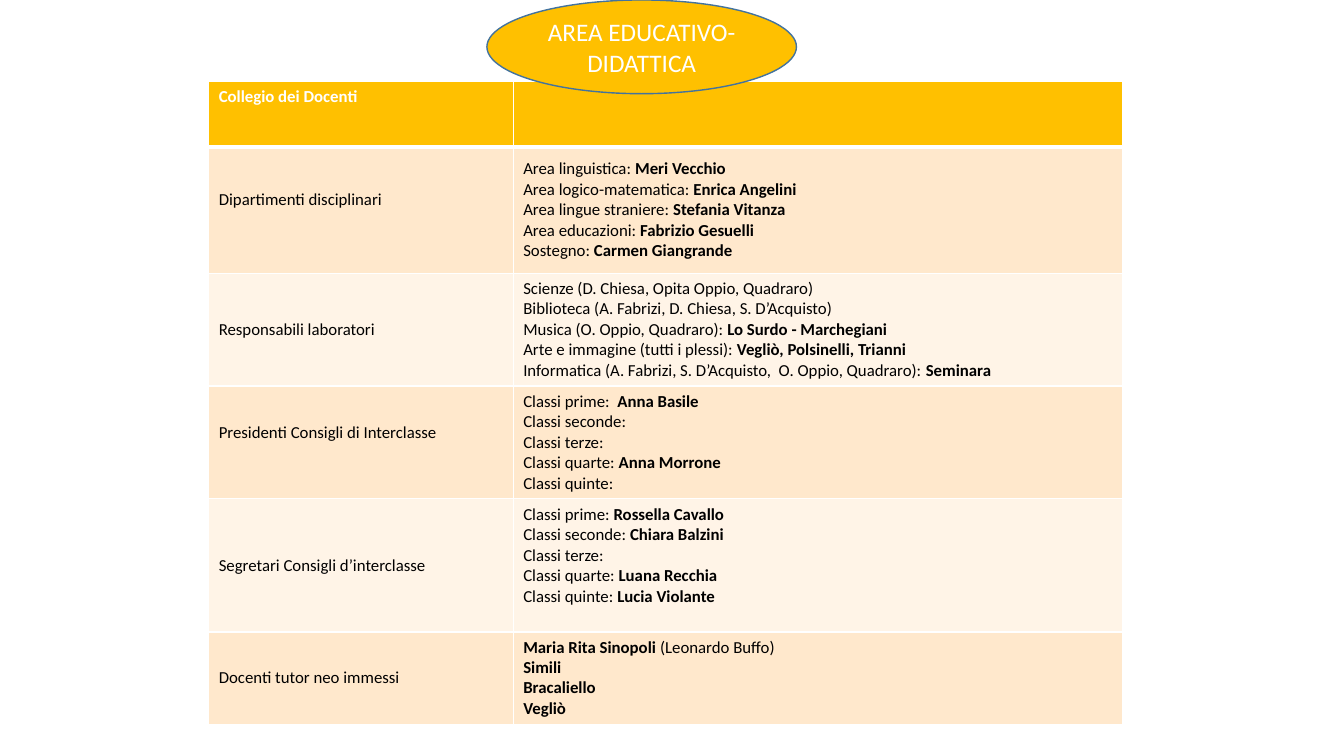
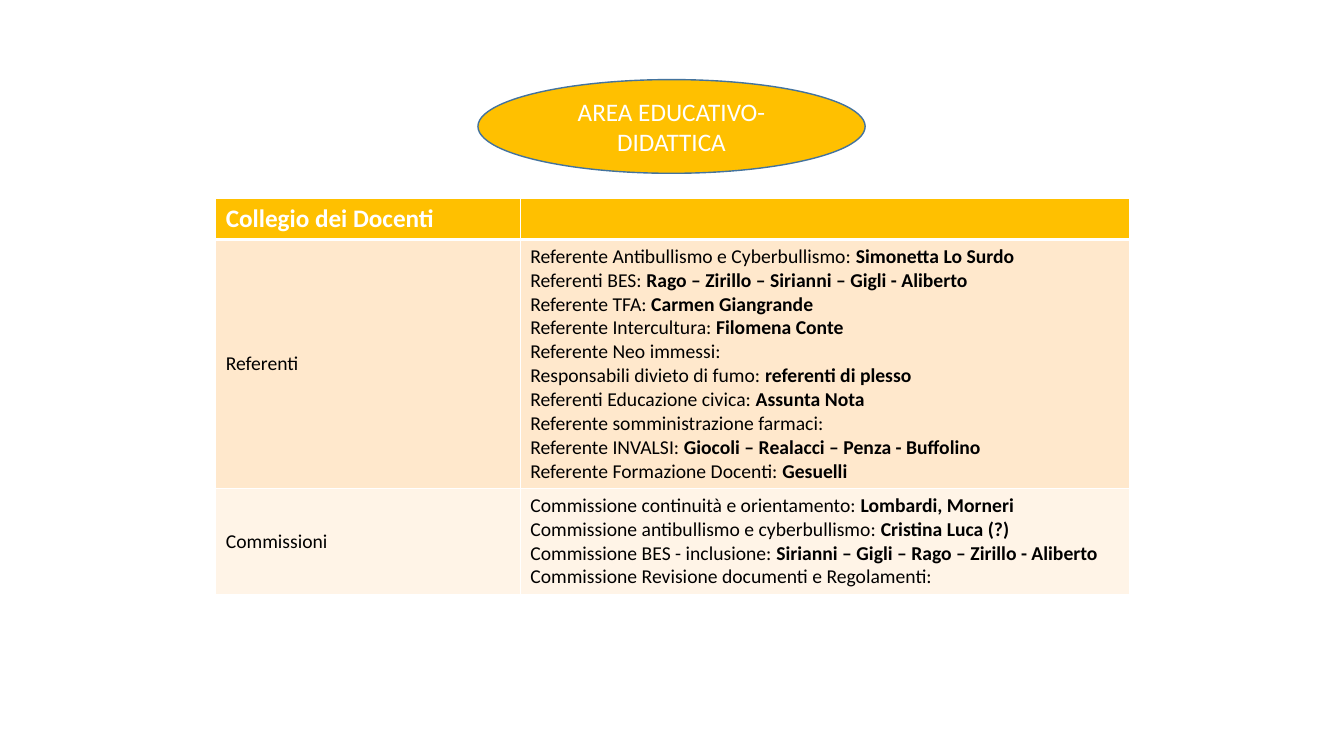
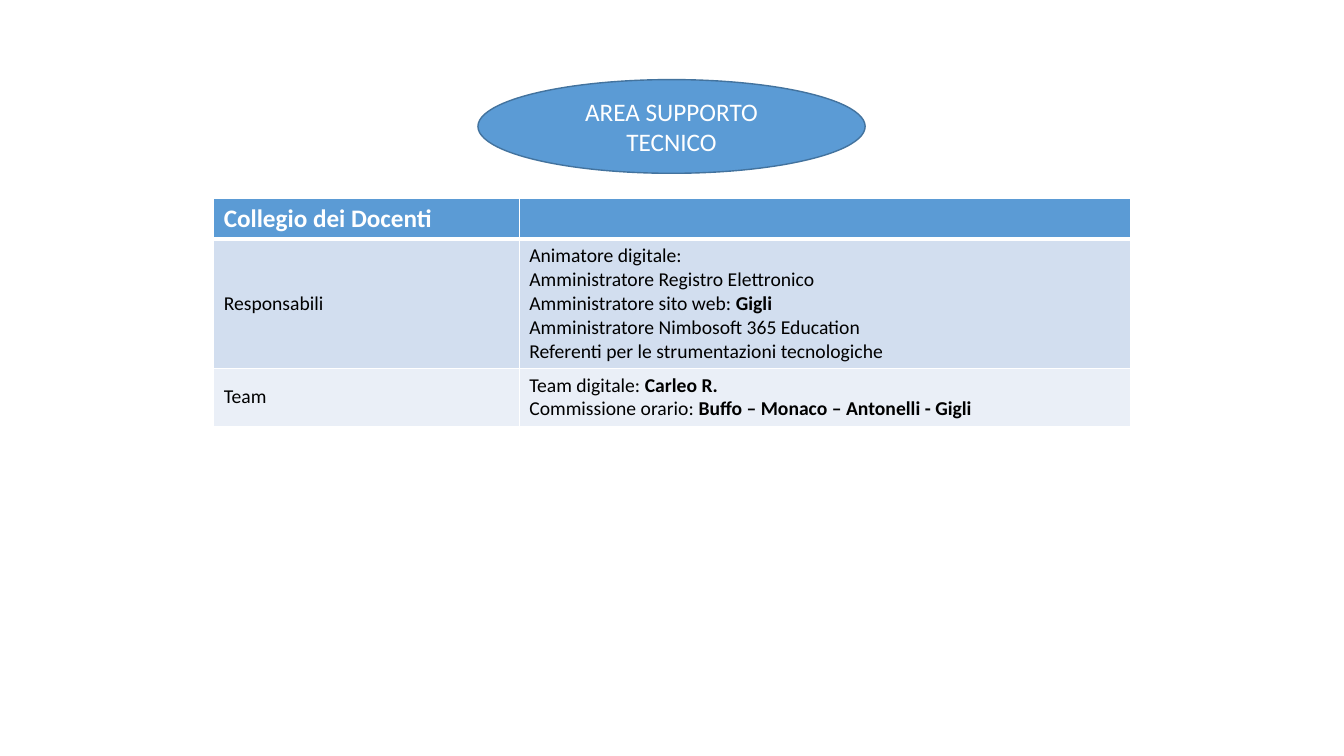
import pptx
import pptx.util
import pptx.dml.color
import pptx.enum.shapes
import pptx.enum.text
import pptx.oxml
import pptx.oxml.ns

WIDE, HIGH = pptx.util.Inches(13.33), pptx.util.Inches(7.5)
FACE = "Calibri"
HUES = {"gold": "FFC000", "sand": "FFE8CC", "cream": "FFF4E7",
        "blue": "5B9BD5", "sky": "D2DEEF", "mist": "EAEFF7",
        "edge": "43739E", "white": "FFFFFF", "black": "000000"}
WARM = ("gold", "sand", "cream")
COOL = ("blue", "sky", "mist")
HEAD = "Collegio dei Docenti"
SPLIT = 1 / 3
INSET = 0.5 ** 0.5
PAD = pptx.util.Inches(0.05)

DUTIES = [
    (16.67, "Dipartimenti disciplinari", [
        "Area linguistica: |Meri Vecchio",
        "Area logico-matematica: |Enrica Angelini",
        "Area lingue straniere: |Stefania Vitanza",
        "Area educazioni: |Fabrizio Gesuelli",
        "Sostegno: |Carmen Giangrande"], (1, 0)),
    (14.93, "Responsabili laboratori", [
        "Scienze (D. Chiesa, Opita Oppio, Quadraro)",
        "Biblioteca (A. Fabrizi, D. Chiesa, S. D’Acquisto)",
        "Musica (O. Oppio, Quadraro): |Lo Surdo - Marchegiani",
        "Arte e immagine (tutti i plessi): |Vegliò, Polsinelli, Trianni",
        "Informatica (A. Fabrizi, S. D’Acquisto,  O. Oppio, Quadraro): |Seminara"], (0, 0)),
    (14.93, "Presidenti Consigli di Interclasse", [
        "Classi prime:  |Anna Basile",
        "Classi seconde:",
        "Classi terze:",
        "Classi quarte: |Anna Morrone",
        "Classi quinte:"], (1, 0)),
    (17.6, "Segretari Consigli d’interclasse", [
        "Classi prime: |Rossella Cavallo",
        "Classi seconde: |Chiara Balzini",
        "Classi terze:",
        "Classi quarte: |Luana Recchia",
        "Classi quinte: |Lucia Violante"], (0, 1)),
    (12.2, "Docenti tutor neo immessi", [
        "|Maria Rita Sinopoli |(Leonardo Buffo)",
        "|Simili",
        "|Bracaliello",
        "|Vegliò"], (0, 0)),
]

GROUPS = [
    (32.96, "Referenti", [
        "Referente Antibullismo e Cyberbullismo: |Simonetta Lo Surdo",
        "Referenti BES: |Rago – Zirillo – Sirianni – Gigli - Aliberto",
        "Referente TFA: |Carmen Giangrande",
        "Referente Intercultura: |Filomena Conte",
        "Referente Neo immessi:",
        "Responsabili divieto di fumo: |referenti di plesso",
        "Referenti Educazione civica: |Assunta Nota",
        "Referente somministrazione farmaci:",
        "Referente INVALSI: |Giocoli – Realacci – Penza - Buffolino",
        "Referente Formazione Docenti: |Gesuelli"], (0, 0)),
    (13.87, "Commissioni", [
        "Commissione continuità e orientamento: |Lombardi, Morneri",
        "Commissione antibullismo e cyberbullismo: |Cristina Luca (?)",
        "Commissione BES - inclusione: |Sirianni – Gigli – Rago – Zirillo - Aliberto",
        "Commissione Revisione documenti e Regolamenti:"], (0, 0)),
]

SUPPORT = [
    (17.1, "Responsabili", [
        "Animatore digitale:",
        "Amministratore Registro Elettronico",
        "Amministratore sito web: |Gigli",
        "Amministratore Nimbosoft 365 Education",
        "Referenti per le strumentazioni tecnologiche"], (0, 0)),
    (7.6, "Team", [
        "Team digitale: |Carleo R.",
        "Commissione orario: |Buffo – Monaco – Antonelli - Gigli"], (0, 0)),
]


def hue(name):
    return pptx.dml.color.RGBColor.from_string(HUES[name])


def across(share):
    return int(WIDE * share / 100)


def down(share):
    return int(HIGH * share / 100)


def style(para, size, tone):
    para.font.name = FACE
    para.font.size = pptx.util.Pt(size)
    para.font.color.rgb = hue(tone)


def write(frame, lines, size, tone):
    for spot, line in enumerate(lines):
        para = frame.add_paragraph() if spot else frame.paragraphs[0]
        style(para, size, tone)
        for turn, part in enumerate(line.split("|")):
            if part:
                run = para.add_run()
                run.text = part
                run.font.bold = turn % 2 == 1


def border(cell, top, base):
    props = cell._tc.get_or_add_tcPr()
    for side, width in (("L", 1), ("R", 1), ("T", top), ("B", base)):
        props.append(pptx.oxml.parse_xml(
            f'<a:ln{side} {pptx.oxml.ns.nsdecls("a")} w="{pptx.util.Pt(width)}">'
            f'<a:solidFill><a:srgbClr val="{HUES["white"]}"/></a:solidFill></a:ln{side}>'))


def paint(cell, tone, top, base):
    border(cell, top, base)
    cell.fill.solid()
    cell.fill.fore_color.rgb = hue(tone)


def badge(slide, box, text, tone):
    left, top, width, height = box
    place = across(left), down(top), across(width), down(height)
    oval = slide.shapes.add_shape(pptx.enum.shapes.MSO_SHAPE.OVAL, *place)
    oval.shadow.inherit = False
    oval.fill.solid()
    oval.fill.fore_color.rgb = hue(tone)
    oval.line.color.rgb = hue("edge")
    oval.line.width = pptx.util.Pt(1)

    title = slide.shapes.title
    title.width, title.height = int(oval.width * INSET), int(oval.height * INSET)
    title.left = oval.left + (oval.width - title.width) // 2
    title.top = oval.top + (oval.height - title.height) // 2
    frame = title.text_frame
    frame.text = text
    frame.word_wrap = True
    frame.auto_size = pptx.enum.text.MSO_AUTO_SIZE.NONE
    frame.vertical_anchor = pptx.enum.text.MSO_ANCHOR.MIDDLE
    para = frame.paragraphs[0]
    para.alignment = pptx.enum.text.PP_ALIGN.CENTER
    style(para, 18, "white")
    oval._element.addnext(title._element)


def grid(slide, box, rows, tones, head, size):
    left, top, width = box
    tall, large = head
    sizes = [down(tall)] + [down(row[0]) for row in rows]
    table = slide.shapes.add_table(
        len(sizes), 2, across(left), down(top), across(width), sum(sizes)).table
    table.horz_banding = False
    for col, share in zip(table.columns, (SPLIT, 1 - SPLIT)):
        col.width = int(across(width) * share)
    for row, height in zip(table.rows, sizes):
        row.height = height
    for cell in table.rows[0].cells:
        paint(cell, tones[0], 1, 3)
    write(table.cell(0, 0).text_frame, ["|" + HEAD], large, "white")
    for spot, (_, label, lines, tails) in enumerate(rows, 1):
        for cell, words, tail in zip(table.rows[spot].cells, ([label], lines), tails):
            paint(cell, tones[2 - spot % 2], 3 if spot == 1 else 1, 1)
            cell.vertical_anchor = pptx.enum.text.MSO_ANCHOR.MIDDLE
            cell.margin_bottom = PAD + pptx.util.Pt(size * 1.2 * tail)
            write(cell.text_frame, words, size, "black")


def main():
    deck = pptx.Presentation()
    deck.slide_width, deck.slide_height = WIDE, HIGH
    high, low = (36.23, 0, 23.03, 12.4), (35.56, 10.53, 28.81, 12.4)
    pages = [
        ("AREA EDUCATIVO-DIDATTICA", high, (15.53, 10.8, 67.97), DUTIES, WARM, (8.67, 12), 12),
        ("AREA EDUCATIVO-DIDATTICA", low, (16.05, 26.27, 67.97), GROUPS, WARM, (5.4, 18), 14),
        ("AREA SUPPORTO TECNICO", low, (15.9, 26.2, 68.2), SUPPORT, COOL, (5.4, 18), 14),
    ]
    for text, oval, box, rows, tones, head, size in pages:
        slide = deck.slides.add_slide(deck.slide_layouts[5])
        grid(slide, box, rows, tones, head, size)
        badge(slide, oval, text, tones[0])
    deck.save("out.pptx")


if __name__ == "__main__":
    main()
